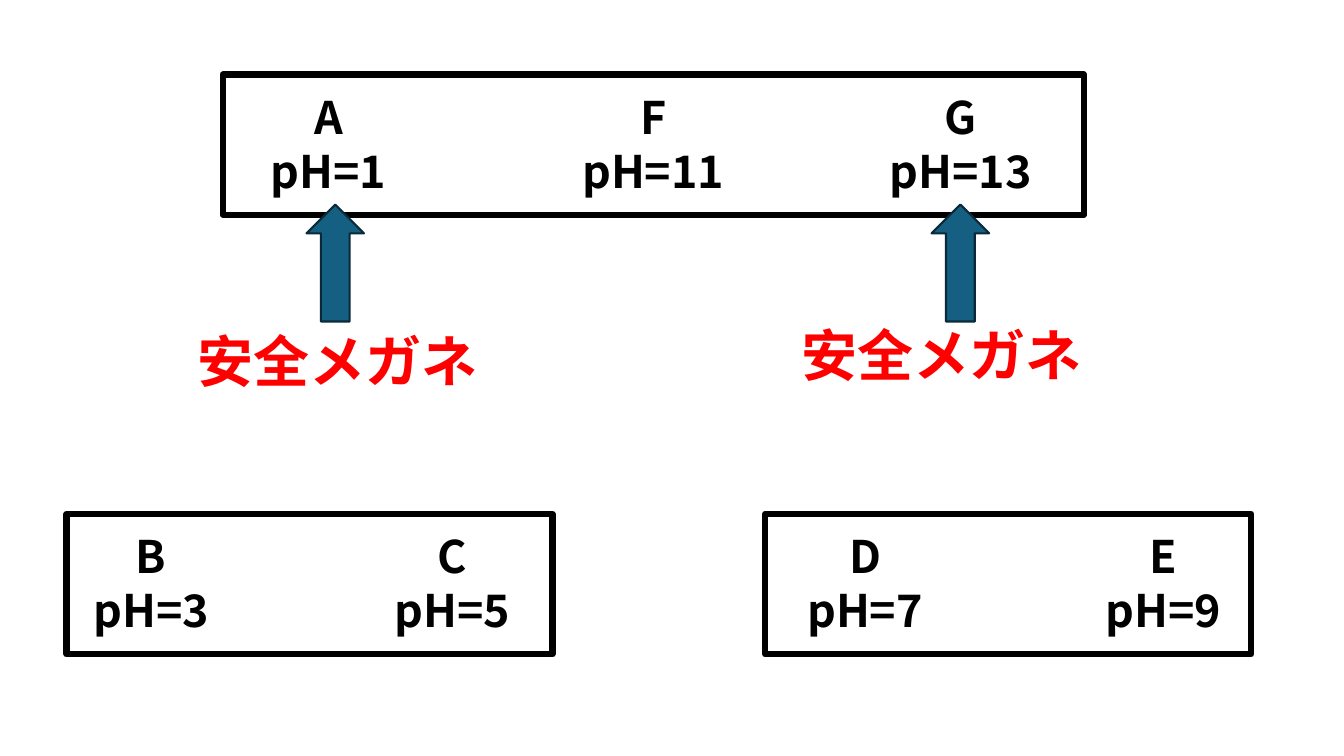
from pptx import Presentation, util as u
from pptx.dml.color import RGBColor
from pptx.enum import shapes, text
from pptx.oxml.ns import qn
from lxml import etree

PX = 9144  # 100 px to the inch
FONT = "Noto Sans CJK JP"
BLACK = RGBColor(0x00, 0x00, 0x00)
RED = RGBColor(0xFF, 0x00, 0x00)
TEAL = RGBColor(0x15, 0x60, 0x82)
DARK_TEAL = RGBColor(0x09, 0x2A, 0x39)

# Group boxes: left, top, width, then samples as (name, pH, left)
GROUPS = [
    (221, 74, 854, [("A", 1, 238), ("F", 11, 560), ("G", 13, 865)]),
    (66, 510, 482, [("B", 3, 62), ("C", 5, 361)]),
    (759, 510, 482, [("D", 7, 770), ("E", 9, 1066)]),
]
BOX_H = 139
SAMPLE_W, SAMPLE_H = 176, 118
# Warnings: arrow left, label left, label top
WARNING = "安全メガネ"
WARNINGS = [(304, 186, 319), (924, 785, 313)]
ARROW_TOP, ARROW_W, ARROW_H = 203, 57, 116
LABEL_W, LABEL_H = 322, 77


def add_shape(s, kind, box, line, width, fill=None):
    sp = s.shapes.add_shape(kind, *(v * PX for v in box))
    sp.shadow.inherit = False
    sp.line.color.rgb = line
    sp.line.width = u.Pt(width)
    if fill is None:
        sp.fill.background()
    else:
        sp.fill.solid()
        sp.fill.fore_color.rgb = fill


def add_text(s, box, lines, size, color, align):
    tf = s.shapes.add_textbox(*(v * PX for v in box)).text_frame
    tf.word_wrap = True
    tf.auto_size = text.MSO_AUTO_SIZE.SHAPE_TO_FIT_TEXT
    for i, line in enumerate(lines):
        p = tf.add_paragraph() if i else tf.paragraphs[0]
        p.alignment = align
        r = p.add_run()
        r.text = line
        r.font.size = u.Pt(size)
        r.font.bold = True
        r.font.color.rgb = color
        r.font.name = FONT
        etree.SubElement(r.font._element, qn("a:ea"), typeface=FONT)


def main():
    prs = Presentation()
    prs.slide_width, prs.slide_height = 1333 * PX, 750 * PX
    s = prs.slides.add_slide(prs.slide_layouts[6])
    kinds = shapes.MSO_SHAPE

    for left, top, width, samples in GROUPS:
        add_shape(s, kinds.RECTANGLE, (left, top, width, BOX_H), BLACK, 4.5)
        sample_top = top + (BOX_H - SAMPLE_H) // 2
        for name, ph, x in samples:
            add_text(s, (x, sample_top, SAMPLE_W, SAMPLE_H),
                     [name, f"pH={ph}"], 32, BLACK, text.PP_ALIGN.CENTER)

    for arrow_x, label_x, label_y in WARNINGS:
        add_shape(s, kinds.UP_ARROW, (arrow_x, ARROW_TOP, ARROW_W, ARROW_H),
                  DARK_TEAL, 1.5, TEAL)
        add_text(s, (label_x, label_y, LABEL_W, LABEL_H),
                 [WARNING], 40, RED, text.PP_ALIGN.LEFT)

    prs.save("out.pptx")


if __name__ == "__main__":
    main()
